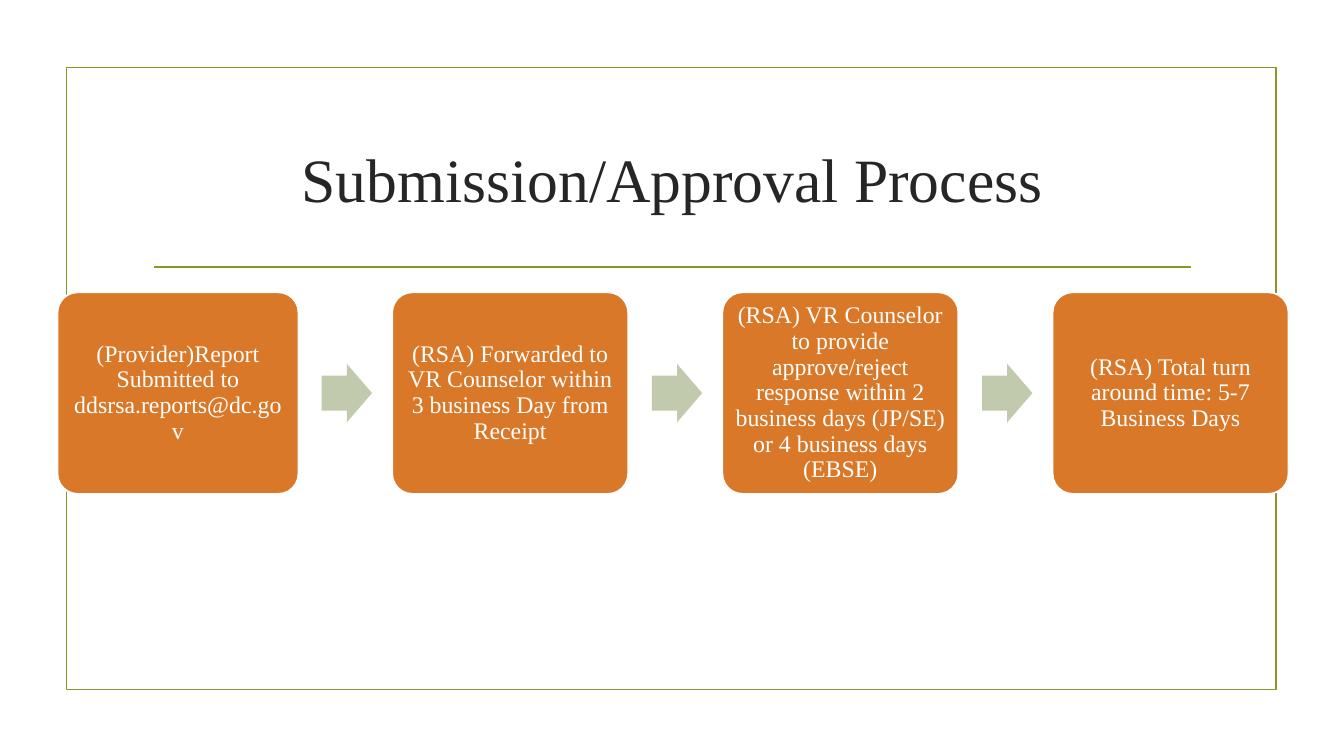
from dataclasses import dataclass

import pptx
import pptx.dml.color
import pptx.enum.shapes
import pptx.enum.text
import pptx.oxml
import pptx.oxml.ns
import pptx.util
from pptx.util import Inches

RGBColor = pptx.dml.color.RGBColor
MSO_SHAPE = pptx.enum.shapes.MSO_SHAPE


@dataclass(frozen=True)
class Theme:
    font: str = "Times New Roman"
    title_size: float = 44
    step_size: float = 17
    line_width: float = 1.25
    title: RGBColor = RGBColor(0x26, 0x26, 0x26)
    frame: RGBColor = RGBColor(0x83, 0x99, 0x2A)
    step: RGBColor = RGBColor(0xD9, 0x78, 0x28)
    arrow: RGBColor = RGBColor(0xC1, 0xCA, 0xAD)
    white: RGBColor = RGBColor(0xFF, 0xFF, 0xFF)


@dataclass(frozen=True)
class Step:
    text: str
    left: float
    width: float = 2.34


THEME = Theme()
STEP_TOP, STEP_HEIGHT = 2.9, 2
SECOND_STEP_LEFT = 3.89
STEP_PITCH = 6.55 / 2
FIRST_ARROW_LEFT = 3.19
ARROW_WIDTH, ARROW_HEIGHT = 0.5, 0.58

STEPS = [
    Step("(Provider)Report Submitted to ddsrsa.reports@dc.gov", 0.57, 2.39),
    Step("(RSA) Forwarded to VR Counselor within 3 business Day from Receipt",
         SECOND_STEP_LEFT),
    Step("(RSA) VR Counselor to provide approve/reject response within 2 "
         "business days (JP/SE) or 4 business days (EBSE)",
         SECOND_STEP_LEFT + STEP_PITCH),
    Step("(RSA) Total turn around time: 5-7 Business Days",
         SECOND_STEP_LEFT + 2 * STEP_PITCH),
]


def set_text(shape, text: str, size: float, color: RGBColor) -> None:
    frame = shape.text_frame
    frame.text = text
    frame.word_wrap = True
    frame.auto_size = pptx.enum.text.MSO_AUTO_SIZE.NONE
    frame.vertical_anchor = pptx.enum.text.MSO_ANCHOR.MIDDLE
    paragraph = frame.paragraphs[0]
    paragraph.alignment = pptx.enum.text.PP_ALIGN.CENTER
    font = paragraph.runs[0].font
    font.name = THEME.font
    font.size = pptx.util.Pt(size)
    font.color.rgb = color


def set_line(line, color: RGBColor) -> None:
    line.color.rgb = color
    line.width = pptx.util.Pt(THEME.line_width)


def add_frame(slide) -> None:
    """Draw the border and the rule below the title."""
    border = slide.shapes.add_shape(
        MSO_SHAPE.RECTANGLE, Inches(0.66), Inches(0.67), Inches(12), Inches(6.17))
    border.shadow.inherit = False
    border.fill.background()
    set_line(border.line, THEME.frame)

    rule = slide.shapes.add_connector(
        pptx.enum.shapes.MSO_CONNECTOR.STRAIGHT,
        Inches(1.53), Inches(2.65), Inches(11.81), Inches(2.65))
    set_line(rule.line, THEME.frame)
    rule.element.spPr.append(
        pptx.oxml.parse_xml(f"<a:effectLst {pptx.oxml.ns.nsdecls('a')}/>"))


def add_title(slide, text: str) -> None:
    title = slide.shapes.title
    title.left, title.top = Inches(1.42), Inches(1.21)
    title.width, title.height = Inches(10.5), Inches(1.1)
    set_text(title, text, THEME.title_size, THEME.title)


def add_step(slide, step: Step) -> None:
    box = slide.shapes.add_shape(
        MSO_SHAPE.ROUNDED_RECTANGLE, Inches(step.left), Inches(STEP_TOP),
        Inches(step.width), Inches(STEP_HEIGHT))
    box.adjustments[0] = 0.1
    box.shadow.inherit = False
    box.fill.solid()
    box.fill.fore_color.rgb = THEME.step
    set_line(box.line, THEME.white)
    set_text(box, step.text, THEME.step_size, THEME.white)
    frame = box.text_frame
    frame.margin_left = frame.margin_right = Inches(0.07)
    frame.margin_top = frame.margin_bottom = Inches(0.07)
    frame.paragraphs[0].line_spacing = 0.9


def add_arrow(slide, left: float) -> None:
    top = STEP_TOP + (STEP_HEIGHT - ARROW_HEIGHT) / 2
    arrow = slide.shapes.add_shape(
        MSO_SHAPE.RIGHT_ARROW, Inches(left), Inches(top),
        Inches(ARROW_WIDTH), Inches(ARROW_HEIGHT))
    arrow.adjustments[0] = 0.6
    arrow.adjustments[1] = 0.5
    arrow.shadow.inherit = False
    arrow.fill.solid()
    arrow.fill.fore_color.rgb = THEME.arrow
    arrow.line.fill.background()


def main() -> None:
    presentation = pptx.Presentation()
    presentation.slide_width = Inches(13.33)
    presentation.slide_height = Inches(7.5)
    title_only = presentation.slide_layouts[5]
    slide = presentation.slides.add_slide(title_only)

    add_frame(slide)
    add_title(slide, "Submission/Approval Process")
    for step in STEPS:
        add_step(slide, step)
    for index in range(len(STEPS) - 1):
        add_arrow(slide, FIRST_ARROW_LEFT + index * STEP_PITCH)

    presentation.save("out.pptx")


if __name__ == "__main__":
    main()
